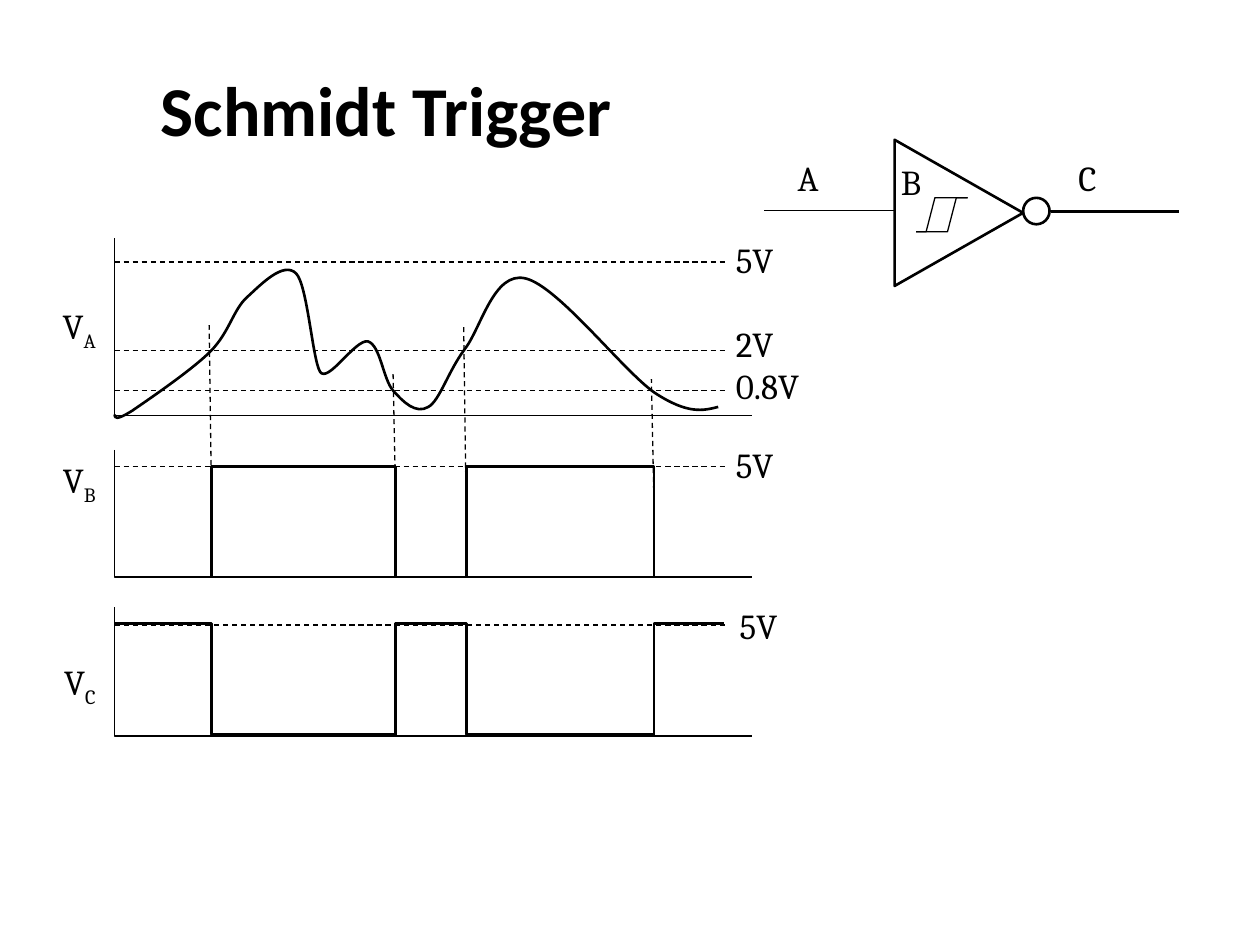
import pptx
import pptx.dml.color
import pptx.enum.dml
import pptx.enum.shapes
import pptx.enum.text
import pptx.oxml
import pptx.oxml.ns
import pptx.util

COLUMNS, ROWS = 10, 7.5
THIN, THICK = 0.75, 1.5
ALIGN = pptx.enum.text.PP_ALIGN
SHAPE = pptx.enum.shapes.MSO_SHAPE


def color(hex_string):
    return pptx.dml.color.RGBColor.from_string(hex_string)


class Drawing:
    """Holds the style and the current slide; lengths are grid columns and rows."""

    ink = "000000"
    title_font, label_font = "Calibri", "Cambria"
    title_size, label_size = 40, 20

    def __init__(self, presentation):
        self.column = presentation.slide_width / COLUMNS
        self.row = presentation.slide_height / ROWS
        self.slide = presentation.slides.add_slide(presentation.slide_layouts[5])

    def place(self, x, y):
        return round(x * self.column), round(y * self.row)

    def style_line(self, line, width, dashed=False):
        line.color.rgb = color(self.ink)
        line.width = pptx.util.Pt(width)
        if dashed:
            line.dash_style = pptx.enum.dml.MSO_LINE.DASH

    def style_run(self, run, font_name, size, bold=False):
        run.font.name = font_name
        run.font.size = pptx.util.Pt(size)
        run.font.bold = bold
        run.font.color.rgb = color(self.ink)

    def outline(self, shape, width):
        shape.shadow.inherit = False
        shape.fill.background()
        self.style_line(shape.line, width)
        return shape

    def title(self, text, x, y, width, height):
        shape = self.slide.shapes.title
        shape.left, shape.top = self.place(x, y)
        shape.width, shape.height = self.place(width, height)
        frame = shape.text_frame
        frame.text = text
        frame.auto_size = pptx.enum.text.MSO_AUTO_SIZE.NONE
        frame.vertical_anchor = pptx.enum.text.MSO_ANCHOR.TOP
        frame.paragraphs[0].alignment = ALIGN.CENTER
        self.style_run(frame.paragraphs[0].runs[0], self.title_font, self.title_size, True)

    def label(self, text, x, y, width=0.58, subscript="", align=ALIGN.LEFT):
        box = self.slide.shapes.add_textbox(*self.place(x, y), *self.place(width, 0.4))
        frame = box.text_frame
        frame.word_wrap = True
        frame.margin_left = frame.margin_right = frame.margin_top = frame.margin_bottom = 0
        paragraph = frame.paragraphs[0]
        paragraph.text = text
        paragraph.alignment = align
        if subscript:
            run = paragraph.add_run()
            run.text = subscript
            run._r.get_or_add_rPr().set("baseline", "-25000")
        for run in paragraph.runs:
            self.style_run(run, self.label_font, self.label_size)

    def line(self, start, end, width=THIN, dashed=False):
        connector = self.slide.shapes.add_connector(
            pptx.enum.shapes.MSO_CONNECTOR.STRAIGHT, *self.place(*start), *self.place(*end))
        self.style_line(connector.line, width, dashed)
        connector._element.spPr.append(
            pptx.oxml.parse_xml(f"<a:effectLst {pptx.oxml.ns.nsdecls('a')}/>"))

    def preset(self, kind, x, y, width, height, rotation=0):
        shape = self.slide.shapes.add_shape(kind, *self.place(x, y), *self.place(width, height))
        shape.rotation = rotation
        self.outline(shape, THICK)

    def polyline(self, points, width=THIN):
        start, *others = [self.place(*point) for point in points]
        builder = self.slide.shapes.build_freeform(*start, scale=1.0)
        builder.add_line_segments(others, close=False)
        return self.outline(builder.convert_to_shape(), width)

    def curve(self, points, width):
        """Each three points after the first are the handles and end of one arc."""
        shape = self.polyline(points, width)
        segments = shape._element.findall(".//" + pptx.oxml.ns.qn("a:lnTo"))
        for first, second, third in zip(*[iter(segments)] * 3):
            arc = pptx.oxml.parse_xml(f"<a:cubicBezTo {pptx.oxml.ns.nsdecls('a')}/>")
            first.addprevious(arc)
            for segment in (first, second, third):
                arc.append(segment[0])
                segment.getparent().remove(segment)


def draw_inverter(drawing):
    drawing.line((7.1, 1.67), (6.06, 1.67), 1)
    drawing.line((8.34, 1.68), (9.36, 1.68), THICK)
    drawing.preset(SHAPE.ISOSCELES_TRIANGLE, 7.03, 1.18, 1.16, 1.02, rotation=90)
    drawing.preset(SHAPE.OVAL, 8.12, 1.57, 0.21, 0.21)
    # Hysteresis symbol
    low, high = 1.84, 1.57
    drawing.polyline([(7.27, low), (7.52, low), (7.59, high), (7.68, high)])
    drawing.polyline([(7.68, high), (7.42, high), (7.35, low), (7.27, low)])
    for text, x, y in [("A", 6.33, 1.24), ("B", 7.15, 1.27), ("C", 8.56, 1.24)]:
        drawing.label(text, x, y, 0.34)


def draw_pulses(drawing, idle, active, edges):
    """A square wave that leaves idle and returns at each pair of edges."""
    start, rise, fall, second_rise, second_fall, end = edges
    drawing.polyline([(start, idle), (rise, idle), (rise, active), (fall, active)], THICK)
    drawing.polyline([(fall, active), (fall, idle), (second_rise, idle), (second_rise, active),
                      (second_fall, active), (second_fall, idle), (end, idle)], THICK)


def draw_timing(drawing):
    left, right, level_end = 0.91, 5.97, 5.75

    # Axes: name, label top, axis top, axis bottom
    for name, label_top, top, bottom in [("A", 2.42, 1.89, 3.3), ("B", 3.64, 3.57, 4.58),
                                         ("C", 5.24, 4.82, 5.84)]:
        drawing.polyline([(left, top), (left, bottom), (right, bottom)])
        drawing.label("V", 0.33, label_top, 0.43, name, ALIGN.RIGHT)

    # Voltage levels: text, label left, label top, level
    for text, x, top, level in [("5V", 5.84, 1.89, 2.08), ("2V", 5.84, 2.56, 2.78),
                                ("0.8V", 5.84, 2.89, 3.1), ("5V", 5.84, 3.52, 3.7),
                                ("5V", 5.87, 4.8, 4.96)]:
        drawing.line((left, level), (level_end, level), dashed=True)
        drawing.label(text, x, top)

    # Square waves, B and its inverse C
    edges = [left, 1.68, 3.14, 3.7, 5.19, level_end]
    draw_pulses(drawing, 4.58, 3.7, edges)
    draw_pulses(drawing, 4.95, 5.83, edges)

    # Input signal
    drawing.curve([
        (0.91, 3.29),
        (0.91, 3.32), (0.92, 3.34), (1.05, 3.26),
        (1.18, 3.17), (1.52, 2.94), (1.67, 2.79),
        (1.82, 2.64), (1.85, 2.46), (1.96, 2.36),
        (2.07, 2.26), (2.25, 2.07), (2.35, 2.17),
        (2.44, 2.26), (2.48, 2.85), (2.54, 2.95),
        (2.6, 3.05), (2.82, 2.69), (2.92, 2.71),
        (3.02, 2.74), (3.04, 3.01), (3.12, 3.1),
        (3.2, 3.19), (3.3, 3.29), (3.4, 3.23),
        (3.49, 3.18), (3.56, 2.94), (3.69, 2.77),
        (3.82, 2.6), (3.92, 2.15), (4.17, 2.21),
        (4.43, 2.27), (4.95, 2.95), (5.2, 3.12),
        (5.46, 3.29), (5.58, 3.26), (5.7, 3.23),
    ], THICK)

    # Switching moments
    for x, bottom, top in zip(edges[1:-1], [4.05, 3.94, 4.07, 3.97], [2.58, 2.97, 2.59, 3.01]):
        drawing.line((x, bottom), (x - 0.02, top), dashed=True)


def main():
    presentation = pptx.Presentation()
    presentation.slide_width = pptx.util.Inches(COLUMNS)
    presentation.slide_height = pptx.util.Inches(ROWS)
    drawing = Drawing(presentation)
    drawing.title("Schmidt Trigger", 1.02, 0.48, 4.09, 0.77)
    draw_inverter(drawing)
    draw_timing(drawing)
    presentation.save("out.pptx")


if __name__ == "__main__":
    main()
